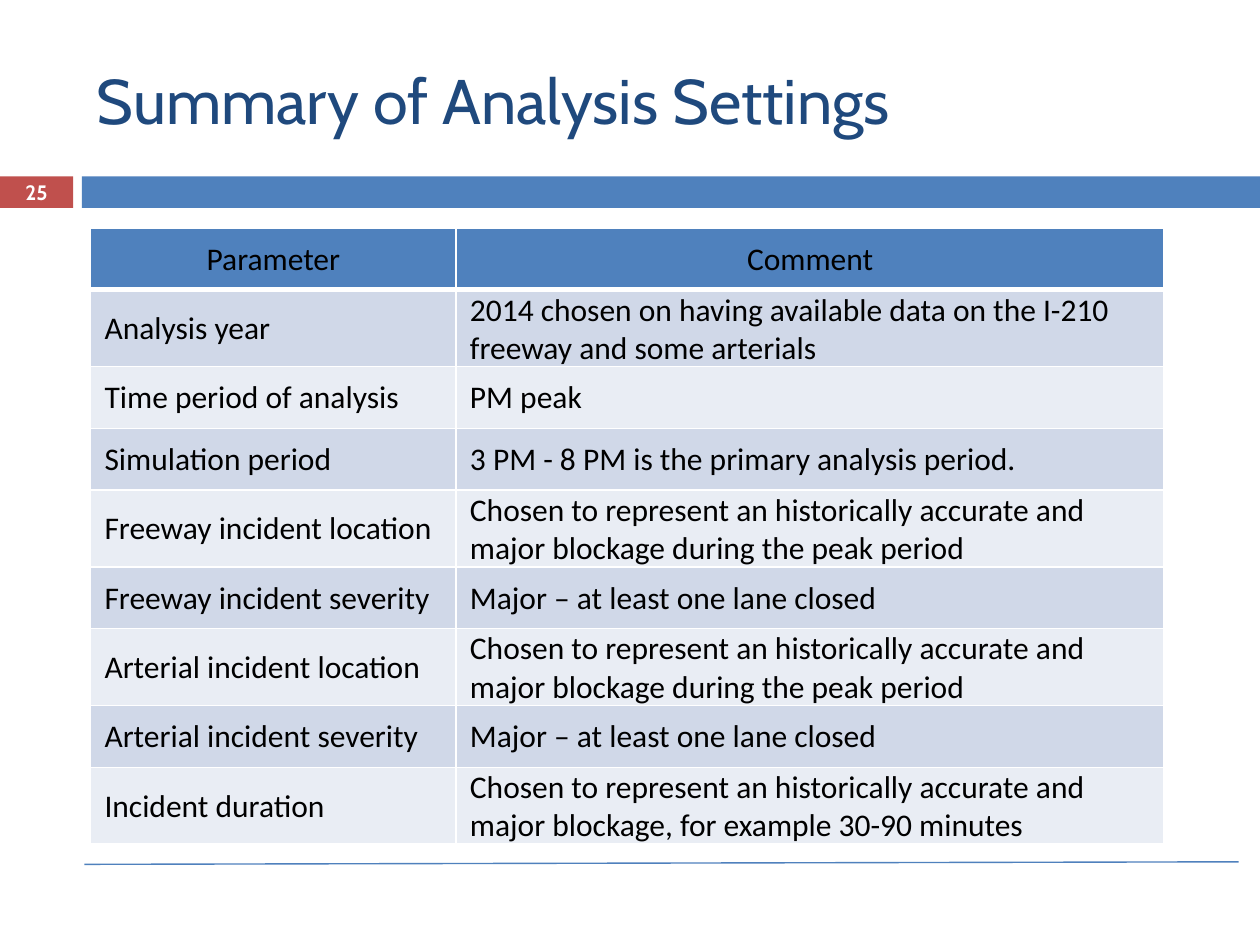
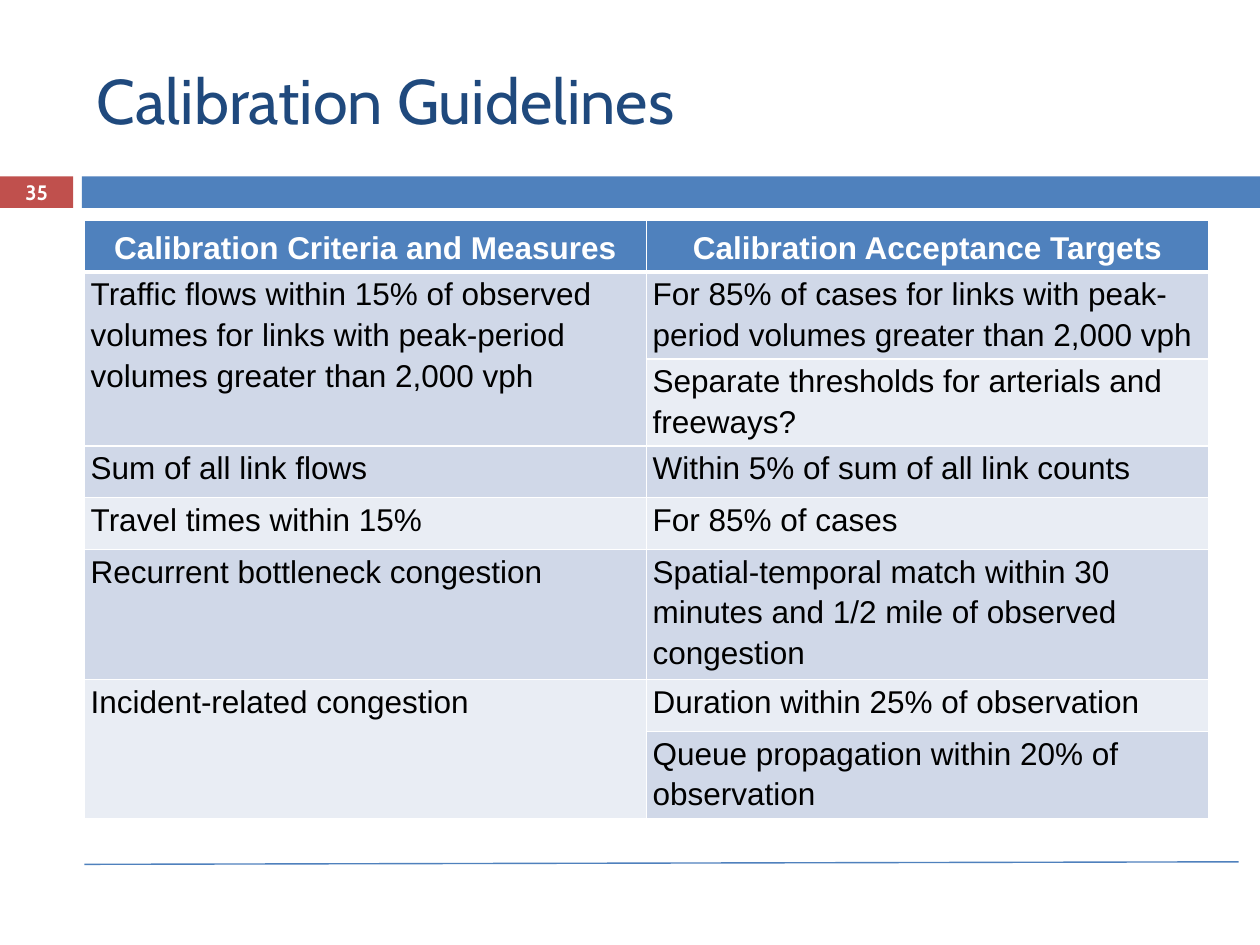
from dataclasses import dataclass

from lxml.etree import SubElement
from pptx import Presentation
from pptx.dml.color import RGBColor
from pptx.enum.shapes import MSO_CONNECTOR as Line, MSO_SHAPE as Shape
from pptx.enum.text import MSO_ANCHOR as Anchor, PP_ALIGN as Align
from pptx.oxml.ns import qn
from pptx.util import Inches, Pt

BLUE, RED, NAVY = "4F81BD", "C0504D", "1F497D"
WHITE, BLACK = "FFFFFF", "000000"
BANDS = ("E9EDF4", "D0D8E8")


@dataclass
class Look:
    """How the text of one table is set; pads are left, top, right, bottom."""
    font: str
    pads: tuple
    head: str
    bold: bool = False
    anchor: Anchor = Anchor.TOP
    indent: float = 0
    space: float = 1
    after: float = 0


SETTINGS = Look("Calibri", (0.01, 0.01, 0.01, 0), BLACK,
                anchor=Anchor.MIDDLE, indent=0.1)
TARGETS = Look("Arial", (0.05, 0, 0.05, 0), WHITE, bold=True,
               space=1.15, after=3)

BLOCKAGE = ("Chosen to represent an historically accurate and major blockage "
            "during the peak period")
MAJOR = "Major – at least one lane closed"

SETTING_ROWS = [
    ("Parameter", "Comment"),
    ("Analysis year", "2014 chosen on having available data on the I-210 "
                      "freeway and some arterials"),
    ("Time period of analysis", "PM peak"),
    ("Simulation period", "3 PM - 8 PM is the primary analysis period."),
    ("Freeway incident location", BLOCKAGE),
    ("Freeway incident severity", MAJOR),
    ("Arterial incident location", BLOCKAGE),
    ("Arterial incident severity", MAJOR),
    ("Incident duration", "Chosen to represent an historically accurate and "
                          "major blockage, for example 30-90 minutes"),
]

# None continues the cell above it.
TARGET_ROWS = [
    ("Calibration Criteria and Measures", "Calibration Acceptance Targets"),
    ("Traffic flows within 15% of observed volumes for links with "
     "peak-period volumes greater than 2,000 vph",
     "For 85% of cases for links with peak-period volumes greater than "
     "2,000 vph"),
    (None, "Separate thresholds for arterials and freeways?"),
    ("Sum of all link flows", "Within 5% of sum of all link counts"),
    ("Travel times within 15%", "For 85% of cases"),
    ("Recurrent bottleneck congestion",
     "Spatial-temporal match within 30 minutes and 1/2 mile of observed "
     "congestion"),
    ("Incident-related congestion", "Duration within 25% of observation"),
    (None, "Queue propagation within 20% of observation"),
]


def color(code):
    return RGBColor.from_string(code)


def box(*sizes):
    return [Inches(size) for size in sizes]


def paint(item, code):
    item.fill.solid()
    item.fill.fore_color.rgb = color(code)


def add_run(para, text, font, size, code, bold=False):
    run = para.add_run()
    run.text = text
    run.font.name, run.font.size, run.font.bold = font, Pt(size), bold
    run.font.color.rgb = color(code)


def add_bar(slide, left, width, code):
    bar = slide.shapes.add_shape(Shape.RECTANGLE, *box(left, 1.4, width, 0.25))
    bar.shadow.inherit = False
    paint(bar, code)
    bar.line.fill.background()


def add_rule(slide):
    rule = slide.shapes.add_connector(Line.STRAIGHT,
                                      *box(0.67, 6.86, 9.83, 6.84))
    rule.line.color.rgb = color(BLUE)
    rule.line.width = Pt(0.79)
    SubElement(rule._element.spPr, qn("a:effectLst"))


def add_label(slide, place, text, size, code, align=Align.LEFT, bold=False):
    frame = slide.shapes.add_textbox(*box(*place)).text_frame
    frame.word_wrap = True
    frame.vertical_anchor = Anchor.MIDDLE
    para = frame.paragraphs[0]
    para.alignment = align
    add_run(para, text, "Cabin", size, code, bold)


def add_page(deck, title, number):
    """Add a slide with the shared title, bands, number and bottom rule."""
    slide = deck.slides.add_slide(deck.slide_layouts[6])
    add_bar(slide, 0, 0.58, RED)
    add_bar(slide, 0.65, 9.35, BLUE)
    add_rule(slide)
    add_label(slide, (0.67, 0.25, 8.92, 1.08), title, 36, NAVY)
    add_label(slide, (0, 1.39, 0.58, 0.27), str(number), 11.9, WHITE,
              Align.CENTER, True)
    return slide


def set_edges(cell, top, bottom):
    """Draw white cell borders; top and bottom are widths in points."""
    props = cell._tc.get_or_add_tcPr()
    for side, width in zip("LRTB", (1, 1, top, bottom)):
        edge = SubElement(props, qn(f"a:ln{side}"), w=str(Pt(width)))
        fill = SubElement(edge, qn("a:solidFill"))
        SubElement(fill, qn("a:srgbClr"), val=WHITE)


def style_cell(cell, row, look):
    set_edges(cell, 3 if row == 1 else 1, 3 if row == 0 else 1)
    paint(cell, BANDS[row % 2] if row else BLUE)
    (cell.margin_left, cell.margin_top,
     cell.margin_right, cell.margin_bottom) = box(*look.pads)
    cell.vertical_anchor = look.anchor if row else Anchor.MIDDLE


def fill_cell(cell, row, text, look):
    para = cell.text_frame.paragraphs[0]
    para.line_spacing = look.space
    if row:
        para.space_after = Pt(look.after)
        para._p.get_or_add_pPr().set("marL", str(Inches(look.indent)))
        add_run(para, text, look.font, 18, BLACK)
    else:
        para.alignment = Align.CENTER
        add_run(para, text, look.font, 18, look.head, look.bold)


def add_grid(slide, place, widths, heights, rows, look):
    frame = slide.shapes.add_table(len(rows), len(widths), *box(*place))
    table = frame.table
    table.horz_banding = False
    for col, width in zip(table.columns, widths):
        col.width = Inches(width)
    for line, height in zip(table.rows, heights):
        line.height = Inches(height)
    frame.height = Inches(place[3])
    for r, texts in enumerate(rows):
        for c, text in enumerate(texts):
            cell = table.cell(r, c)
            style_cell(cell, r, look)
            if text is None:
                table.cell(r - 1, c).merge(cell)
            else:
                fill_cell(cell, r, text, look)


def main():
    deck = Presentation()
    deck.slide_width, deck.slide_height = box(10, 7.5)

    slide = add_page(deck, "Summary of Analysis Settings", 25)
    heights = [0.58 if len(note) > 50 else 0.49 for _, note in SETTING_ROWS]
    add_grid(slide, (0.72, 1.81, 8.52, 4.91), (2.9, 5.62), heights,
             SETTING_ROWS, SETTINGS)

    slide = add_page(deck, "Calibration Guidelines", 35)
    add_grid(slide, (0.67, 1.75, 8.92, 4.73), (4.46, 4.46),
             [0.41] * len(TARGET_ROWS), TARGET_ROWS, TARGETS)

    deck.save("out.pptx")


if __name__ == "__main__":
    main()
